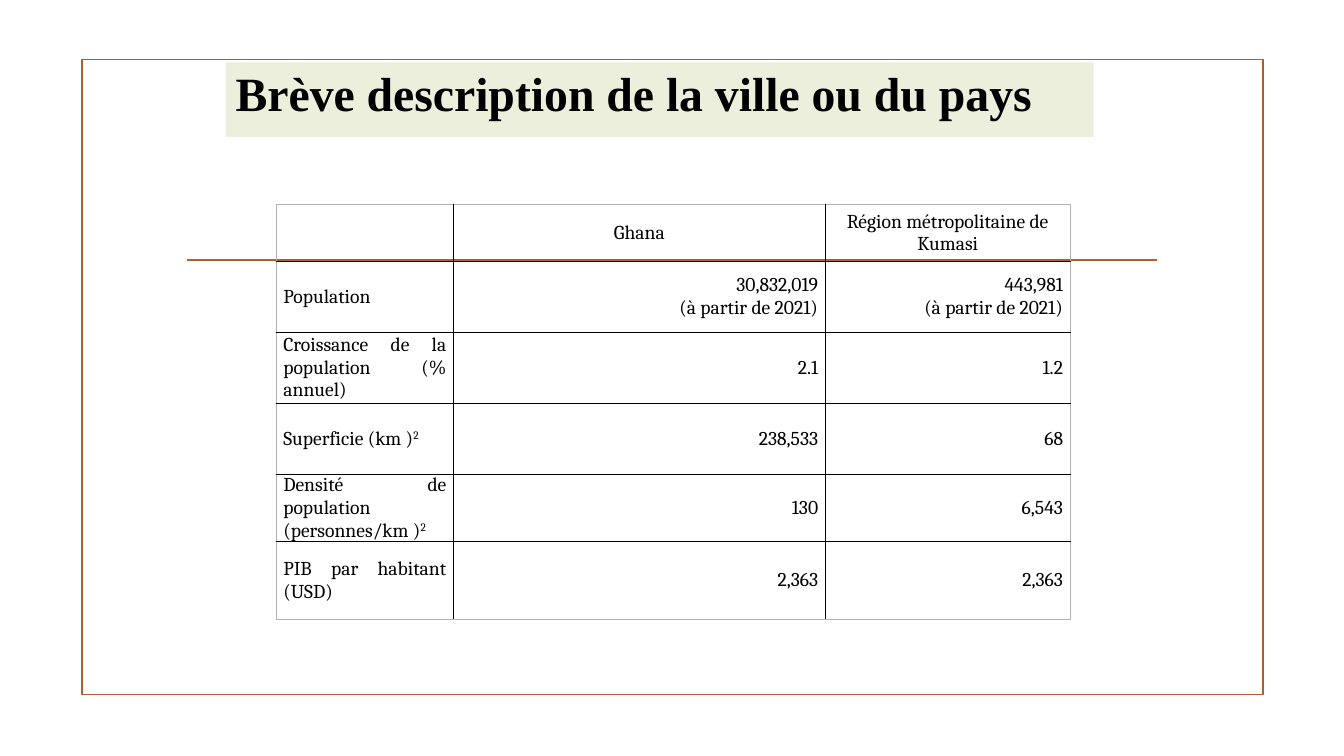
from dataclasses import dataclass

from lxml import etree
from pptx import Presentation
from pptx.dml.color import RGBColor
from pptx.enum.shapes import MSO_CONNECTOR, MSO_SHAPE
from pptx.enum.text import MSO_ANCHOR, PP_ALIGN
from pptx.oxml.ns import qn
from pptx.util import Cm, Pt

RECTANGLE = MSO_SHAPE.RECTANGLE
STRAIGHT = MSO_CONNECTOR.STRAIGHT
MIDDLE = MSO_ANCHOR.MIDDLE
LEFT, CENTER, RIGHT, JUSTIFY = PP_ALIGN.LEFT, PP_ALIGN.CENTER, PP_ALIGN.RIGHT, PP_ALIGN.JUSTIFY


@dataclass(frozen=True)
class Theme:
    """Colours, fonts and sizes of the slide."""
    ink: str = "000000"
    accent: str = "B15E28"
    banner: str = "ECEFDC"
    outer_border: str = "B2B2B2"
    title_font: str = "Times New Roman"
    table_font: str = "Cambria"
    title_size: float = 34.1
    table_size: float = 14
    accent_width: float = 1.25
    border_width: float = 1


THEME = Theme()
TITLE = "Brève description de la ville ou du pays"
COLUMN_WIDTHS = (4.47, 9.37, 6.17)
ROW_HEIGHTS = (1.42, 1.79, 1.79, 1.79, 1.7, 1.95)
INDICATORS = (
    ("", "Ghana", "Région métropolitaine de Kumasi"),
    ("Population", "30,832,019\n(à partir de 2021)", "443,981\n(à partir de 2021)"),
    ("Croissance de la population (% annuel)", "2.1", "1.2"),
    ("Superficie (km )²", "238,533", "68"),
    ("Densité de population (personnes/km )²", "130", "6,543"),
    ("PIB par habitant (USD)", "2,363", "2,363"),
)


def style_font(font, name, size, bold=False):
    """Apply a typeface, size and the ink colour."""
    font.name, font.size, font.bold = name, Pt(size), bold
    font.color.rgb = RGBColor.from_string(THEME.ink)


def style_accent(line):
    """Give a line the accent colour and width."""
    line.color.rgb = RGBColor.from_string(THEME.accent)
    line.width = Pt(THEME.accent_width)


def add_frame(slide, left, top, width, height):
    """Draw the outlined frame with the rule across it."""
    frame = slide.shapes.add_shape(RECTANGLE, Cm(left), Cm(top), Cm(width), Cm(height))
    frame.shadow.inherit = False
    frame.fill.background()
    style_accent(frame.line)
    rule_top = Cm(top + 5.05)
    rule = slide.shapes.add_connector(
        STRAIGHT, Cm(left + 2.66), rule_top, Cm(left + width - 2.67), rule_top)
    etree.SubElement(rule._element.spPr, qn("a:effectLst"))
    style_accent(rule.line)


def add_title(slide, left, top, width, height):
    """Draw the title on its tinted banner."""
    banner = slide.shapes.add_shape(RECTANGLE, Cm(left), Cm(top), Cm(width), Cm(height))
    banner.shadow.inherit = False
    banner.fill.solid()
    banner.fill.fore_color.rgb = RGBColor.from_string(THEME.banner)
    banner.line.fill.background()
    banner.text_frame.word_wrap = True
    banner.text_frame.vertical_anchor = MIDDLE
    heading = banner.text_frame.paragraphs[0]
    heading.text = TITLE
    heading.alignment = LEFT
    heading.line_spacing = 0.7
    style_font(heading.font, THEME.title_font, THEME.title_size, bold=True)


def set_borders(cell, row, column):
    """Border a cell in ink inside the table and in grey on its edge."""
    on_edge = {
        "a:lnL": column == 0,
        "a:lnR": column == len(COLUMN_WIDTHS) - 1,
        "a:lnT": row == 0,
        "a:lnB": row == len(ROW_HEIGHTS) - 1,
    }
    properties = cell._tc.get_or_add_tcPr()
    for side, outer in on_edge.items():
        border = etree.SubElement(properties, qn(side), w=str(Pt(THEME.border_width)))
        fill = etree.SubElement(border, qn("a:solidFill"))
        colour = THEME.outer_border if outer else THEME.ink
        etree.SubElement(fill, qn("a:srgbClr"), val=colour)


def write_cell(cell, text, alignment):
    """Write a cell, raising a closing square sign as a superscript."""
    cell.margin_left = cell.margin_right = Cm(0.18)
    cell.margin_top = cell.margin_bottom = 0
    cell.vertical_anchor = MIDDLE
    cell.text = text.removesuffix("²")
    for paragraph in cell.text_frame.paragraphs:
        paragraph.alignment = alignment
        style_font(paragraph.font, THEME.table_font, THEME.table_size)
    if text.endswith("²"):
        exponent = cell.text_frame.paragraphs[0].add_run()
        exponent.text = "2"
        exponent._r.get_or_add_rPr().set("baseline", "30000")


def add_indicators(slide, left, top):
    """Draw the table comparing the country with the city."""
    table = slide.shapes.add_table(
        len(ROW_HEIGHTS), len(COLUMN_WIDTHS), Cm(left), Cm(top),
        Cm(sum(COLUMN_WIDTHS)), Cm(sum(ROW_HEIGHTS))).table
    table.first_row = table.horz_banding = False
    for column, width in zip(table.columns, COLUMN_WIDTHS):
        column.width = Cm(width)
    for r, (height, values) in enumerate(zip(ROW_HEIGHTS, INDICATORS)):
        table.rows[r].height = Cm(height)
        for c, value in enumerate(values):
            cell = table.cell(r, c)
            set_borders(cell, r, c)
            cell.fill.background()
            write_cell(cell, value, CENTER if r == 0 else JUSTIFY if c == 0 else RIGHT)


def main():
    """Build and save the slide."""
    deck = Presentation()
    deck.slide_width, deck.slide_height = Cm(33.87), Cm(19.05)
    slide = deck.slides.add_slide(deck.slide_layouts[6])
    add_frame(slide, 2.06, 1.5, 29.77, 16)
    add_title(slide, 5.69, 1.57, 21.87, 1.88)
    add_indicators(slide, 6.96, 5.16)
    deck.save("out.pptx")


if __name__ == "__main__":
    main()
